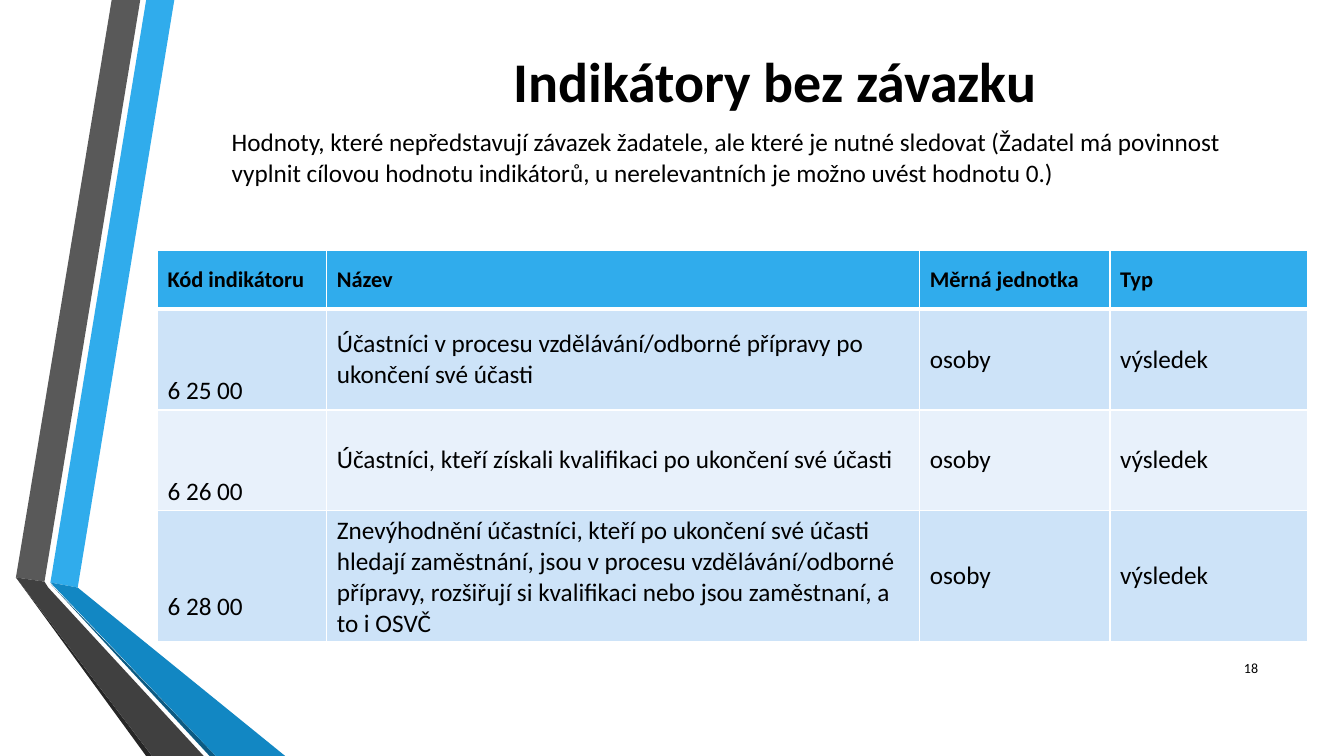
from dataclasses import dataclass

from lxml.etree import SubElement
from pptx import Presentation
from pptx.dml.color import RGBColor
from pptx.enum.text import MSO_ANCHOR, PP_ALIGN
from pptx.oxml.ns import qn
from pptx.util import Emu, Inches, Pt


@dataclass(frozen=True)
class Theme:
    font: str = "Calibri"
    text: str = "000000"
    line: str = "FFFFFF"
    head: str = "30ACEC"
    bands: tuple = ("CDE3F8", "E8F1FB")
    title_size: int = 40
    body_size: int = 18
    head_size: int = 16
    number_size: int = 10


THEME = Theme()

# Grid of 32 columns by 18 rows over the whole slide
WIDTH, HEIGHT = Inches(13.33), Inches(7.5)
COLUMNS, ROWS = 32, 18

# Ribbon at the left, from back to front: colour and corners in grid units
RIBBON = [
    (THEME.head, [(1.2, 13.87), (1.85, 13.99), (4.15, 0), (3.48, 0)]),
    ("595959", [(3.34, 0), (2.66, 0), (0.38, 13.75), (1.06, 13.85)]),
    ("262626", [(0.38, 13.75), (3.48, 18), (3.62, 18)]),
    ("0C5A82", [(1.2, 13.9), (4.99, 18), (5.14, 18)]),
    ("1287C3", [(1.2, 13.87), (5.14, 18), (6.79, 18), (1.85, 13.99)]),
    ("404040", [(4.85, 18), (1.15, 13.99), (1.06, 13.85), (0.38, 13.75), (3.62, 18)]),
]

INTRO = (
    "Hodnoty, které nepředstavují závazek žadatele, ale které je nutné sledovat "
    "(Žadatel má povinnost vyplnit cílovou hodnotu indikátorů, "
    "u nerelevantních je možno uvést hodnotu 0.)"
)

HEADINGS = ("Kód indikátoru", "Název", "Měrná jednotka", "Typ")
INDICATORS = [
    ("6 25 00", "Účastníci v procesu vzdělávání/odborné přípravy po ukončení své účasti"),
    ("6 26 00", "Účastníci, kteří získali kvalifikaci po ukončení své účasti"),
    ("6 28 00", "Znevýhodnění účastníci, kteří po ukončení své účasti hledají zaměstnání, "
                "jsou v procesu vzdělávání/odborné přípravy, rozšiřují si kvalifikaci "
                "nebo jsou zaměstnaní, a to i OSVČ"),
]
COLUMN_SPANS = (4.03, 14.12, 4.53, 4.7)
ROW_SPANS = (1.4, 2.4, 2.4, 3.12)


def col(n):
    return Emu(round(WIDTH * n / COLUMNS))


def row(n):
    return Emu(round(HEIGHT * n / ROWS))


def box(x, y, w, h):
    return col(x), row(y), col(w), row(h)


def rgb(value):
    return RGBColor.from_string(value)


def add_run(p, text, size, bold=False):
    r = p.add_run()
    r.text = text
    r.font.name = THEME.font
    r.font.size = Pt(size)
    r.font.bold = bold
    r.font.color.rgb = rgb(THEME.text)


def add_text(s, place, text, size, align=PP_ALIGN.LEFT, bold=False, anchor=MSO_ANCHOR.TOP):
    tf = s.shapes.add_textbox(*box(*place)).text_frame
    tf.word_wrap = True
    tf.vertical_anchor = anchor
    p = tf.paragraphs[0]
    p.alignment = align
    add_run(p, text, size, bold)


def add_band(s, color, corners):
    points = [(col(x), row(y)) for x, y in corners]
    builder = s.shapes.build_freeform(*points[0])
    builder.add_line_segments(points[1:], close=True)
    sp = builder.convert_to_shape()
    sp.shadow.inherit = False
    sp.fill.solid()
    sp.fill.fore_color.rgb = rgb(color)
    sp.line.fill.background()


def add_borders(cell, top, bottom):
    tc_pr = cell._tc.get_or_add_tcPr()
    for side, width in (("L", 1), ("R", 1), ("T", top), ("B", bottom)):
        ln = SubElement(tc_pr, qn(f"a:ln{side}"), w=str(Pt(width)))
        fill = SubElement(ln, qn("a:solidFill"))
        SubElement(fill, qn("a:srgbClr"), val=THEME.line)


def fill_cell(cell, text, i, j):
    heading = i == 0
    # The heading is parted from the body by a thicker line
    add_borders(cell, top=3 if i == 1 else 1, bottom=3 if heading else 1)
    cell.fill.solid()
    cell.fill.fore_color.rgb = rgb(THEME.head if heading else THEME.bands[(i - 1) % 2])
    cell.vertical_anchor = MSO_ANCHOR.MIDDLE
    p = cell.text_frame.paragraphs[0]
    if j == 0 and not heading:
        p.line_spacing = 3.0
    add_run(p, text, THEME.head_size if heading else THEME.body_size, heading)


def add_indicator_table(s, x, y):
    place = box(x, y, sum(COLUMN_SPANS), sum(ROW_SPANS))
    table = s.shapes.add_table(len(ROW_SPANS), len(COLUMN_SPANS), *place).table
    for column, span in zip(table.columns, COLUMN_SPANS):
        column.width = col(span)
    for table_row, span in zip(table.rows, ROW_SPANS):
        table_row.height = row(span)
    records = [HEADINGS] + [(code, name, "osoby", "výsledek") for code, name in INDICATORS]
    for i, record in enumerate(records):
        for j, text in enumerate(record):
            fill_cell(table.cell(i, j), text, i, j)


def main():
    prs = Presentation()
    prs.slide_width, prs.slide_height = WIDTH, HEIGHT
    s = prs.slides.add_slide(prs.slide_layouts[6])

    # Ribbon
    for color, corners in RIBBON:
        add_band(s, color, corners)

    # Title and introduction
    add_text(s, (8, 1, 20.9, 1.85), "Indikátory bez závazku", THEME.title_size,
             PP_ALIGN.CENTER, bold=True)
    add_text(s, (5.28, 2.9, 25.78, 1.7), INTRO, THEME.body_size)

    # Indicators
    add_indicator_table(s, 3.75, 5.96)

    # Slide number
    add_text(s, (28.75, 15.43, 1.44, 0.96), "18", THEME.number_size,
             PP_ALIGN.RIGHT, anchor=MSO_ANCHOR.MIDDLE)

    prs.save("out.pptx")


if __name__ == "__main__":
    main()
